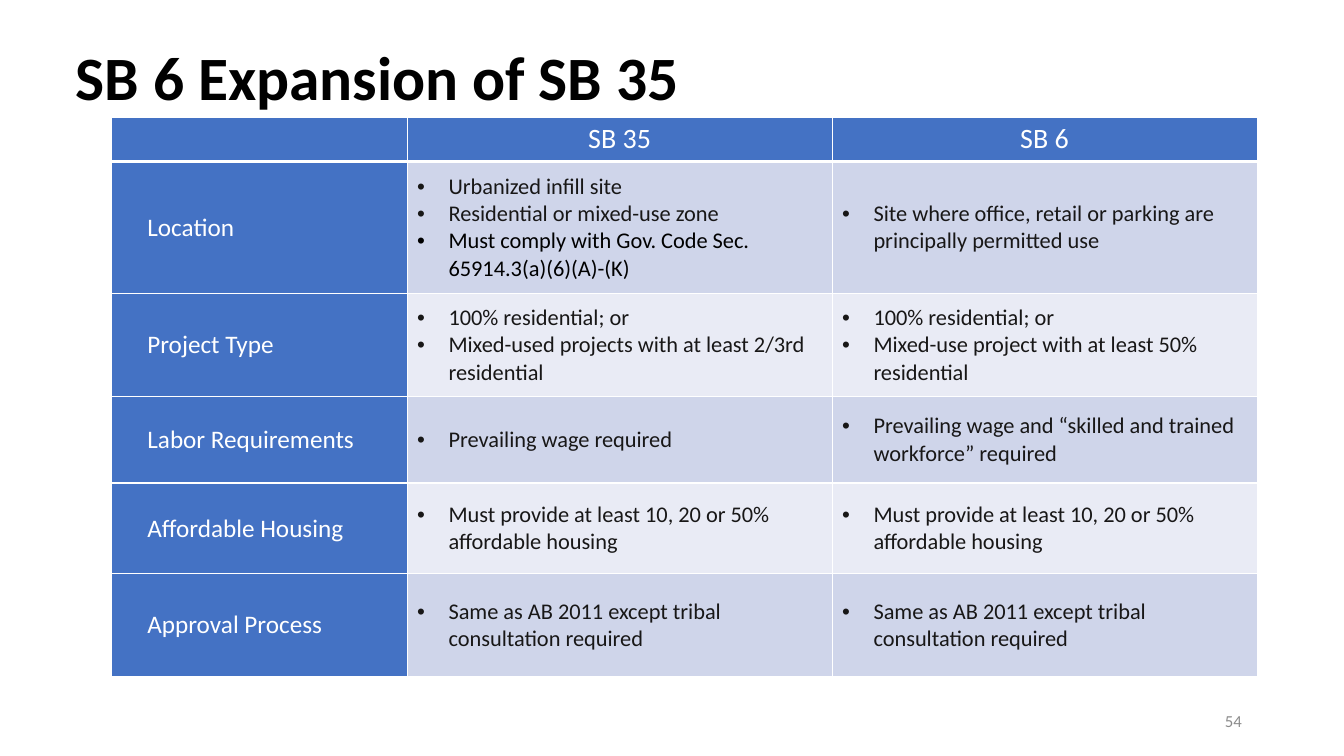
from lxml import etree
from pptx import Presentation
from pptx.dml.color import RGBColor
from pptx.enum.text import MSO_ANCHOR, PP_ALIGN
from pptx.oxml.ns import qn
from pptx.util import Cm, Pt

MIDDLE = MSO_ANCHOR.MIDDLE
LEFT, CENTER, RIGHT = PP_ALIGN.LEFT, PP_ALIGN.CENTER, PP_ALIGN.RIGHT

FONT = "Calibri"
BLUE, WHITE, BLACK, INK, GRAY = "4472C4", "FFFFFF", "000000", "181717", "8C8C8C"
BANDS = ["CFD5EA", "E9EBF5"]

COLS = [7.44, 10.71, 10.71]
ROWS = [1.07, 3.33, 2.59, 2.18, 2.29, 2.59]
HEADS = ["", "SB 35", "SB 6"]
BODY = [
    ("Location",
     ["Urbanized infill site", "Residential or mixed-use zone",
      "Must comply with Gov. Code Sec. 65914.3(a)(6)(A)-(K)"],
     ["Site where office, retail or parking are principally permitted use"]),
    ("Project Type",
     ["100% residential; or",
      "Mixed-used projects with at least 2/3rd residential"],
     ["100% residential; or",
      "Mixed-use project with at least 50% residential"]),
    ("Labor Requirements",
     ["Prevailing wage required"],
     ["Prevailing wage and “skilled and trained workforce” required"]),
    ("Affordable Housing",
     ["Must provide at least 10, 20 or 50% affordable housing"],
     ["Must provide at least 10, 20 or 50% affordable housing"]),
    ("Approval Process",
     ["Same as AB 2011 except tribal consultation required"],
     ["Same as AB 2011 except tribal consultation required"]),
]


def color(code):
    return RGBColor.from_string(code)


def style(para, size, code, align=LEFT, bold=False):
    para.alignment = align
    for run in para.runs:
        run.font.name = FONT
        run.font.size = Pt(size)
        run.font.bold = bold
        run.font.color.rgb = color(code)


def indent(para, left, first=0):
    props = para._p.get_or_add_pPr()
    props.set("marL", str(Cm(left)))
    props.set("indent", str(Cm(first)))
    return props


def bullet(para):
    props = indent(para, 0.79, -0.79)
    etree.SubElement(props, qn("a:buFont"), typeface="Arial")
    etree.SubElement(props, qn("a:buChar"), char="•")


def border(cell, top=1, bottom=1):
    props = cell._tc.get_or_add_tcPr()
    sides = [("L", 1), ("R", 1), ("T", top), ("B", bottom)]
    for spot, (side, width) in enumerate(sides):
        line = etree.Element(qn("a:ln" + side), w=str(Pt(width)))
        fill = etree.SubElement(line, qn("a:solidFill"))
        etree.SubElement(fill, qn("a:srgbClr"), val=WHITE)
        props.insert(spot, line)


def paint(cell, code):
    cell.fill.solid()
    cell.fill.fore_color.rgb = color(code)
    cell.vertical_anchor = MIDDLE


def add_title(slide, text):
    title = slide.shapes.title
    title.left, title.top = Cm(1.65), Cm(0.2)
    title.width, title.height = Cm(31.19), Cm(3.68)
    frame = title.text_frame
    frame.text = text
    frame.vertical_anchor = MIDDLE
    para = frame.paragraphs[0]
    para.line_spacing = 0.9
    style(para, 44, BLACK, bold=True)


def add_head(cell, text):
    paint(cell, BLUE)
    border(cell, bottom=3)
    cell.text_frame.text = text
    style(cell.text_frame.paragraphs[0], 20, WHITE, CENTER)


def add_label(cell, text, top):
    paint(cell, BLUE)
    border(cell, top)
    cell.text_frame.text = text
    para = cell.text_frame.paragraphs[0]
    para.level = 1
    indent(para, 0.64)
    style(para, 18, WHITE)


def add_points(cell, points, band, top):
    paint(cell, band)
    border(cell, top)
    cell.text_frame.text = "\n".join(points)
    for para in cell.text_frame.paragraphs:
        bullet(para)
        # The code citation is set in full black
        style(para, 16, BLACK if "Gov. Code" in para.text else INK)


def add_grid(slide):
    frame = slide.shapes.add_table(len(ROWS), len(COLS), Cm(2.82), Cm(2.95),
                                   Cm(sum(COLS)), Cm(sum(ROWS)))
    table = frame.table
    for col, width in zip(table.columns, COLS):
        col.width = Cm(width)
    for row, height in zip(table.rows, ROWS):
        row.height = Cm(height)
    for col, text in enumerate(HEADS):
        add_head(table.cell(0, col), text)
    for row, (label, *lists) in enumerate(BODY, 1):
        top = 3 if row == 1 else 1
        add_label(table.cell(row, 0), label, top)
        for col, points in enumerate(lists, 1):
            add_points(table.cell(row, col), points, BANDS[(row - 1) % 2], top)


def add_number(slide, text):
    box = slide.shapes.add_textbox(Cm(23.93), Cm(17.65), Cm(7.62), Cm(1.02))
    frame = box.text_frame
    frame.word_wrap = True
    frame.vertical_anchor = MIDDLE
    frame.text = text
    style(frame.paragraphs[0], 12, GRAY, RIGHT)


def main():
    deck = Presentation()
    deck.slide_width, deck.slide_height = Cm(33.87), Cm(19.05)
    slide = deck.slides.add_slide(deck.slide_layouts[5])
    # Heading, comparison table, page number
    add_title(slide, "SB 6 Expansion of SB 35")
    add_grid(slide)
    add_number(slide, "54")
    deck.save("out.pptx")


if __name__ == "__main__":
    main()
